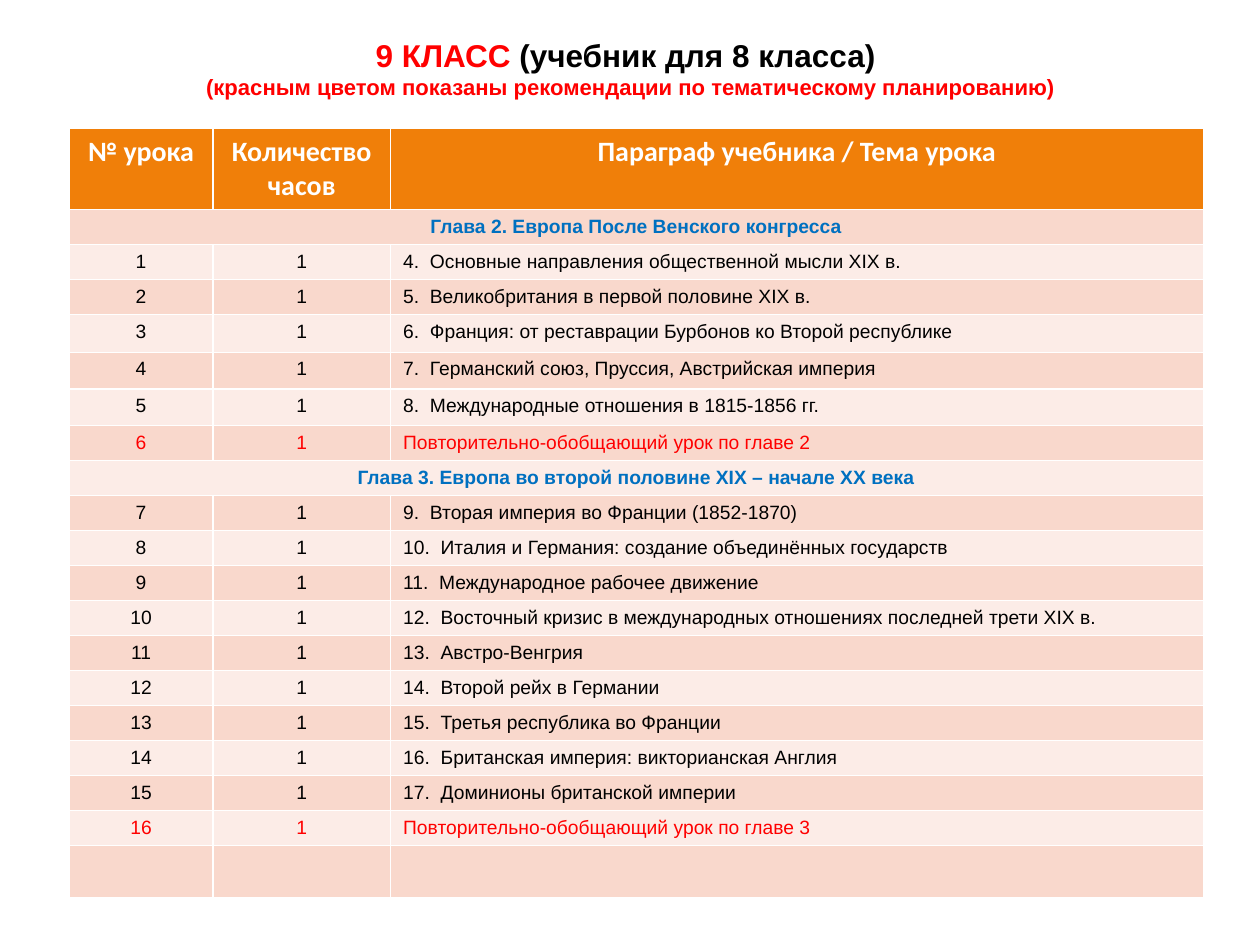
from collections import namedtuple

from pptx import Presentation
from pptx.dml.color import RGBColor
from pptx.enum.text import MSO_ANCHOR as Anchor, MSO_AUTO_SIZE as AutoSize, PP_ALIGN as Align
from pptx.util import Pt

Box = namedtuple("Box", "left top width height")

RED = RGBColor(0xFF, 0x00, 0x00)
BLACK = RGBColor(0x00, 0x00, 0x00)
WHITE = RGBColor(0xFF, 0xFF, 0xFF)
BLUE = RGBColor(0x00, 0x70, 0xC0)
ORANGE = RGBColor(0xF0, 0x7F, 0x09)
BANDS = (RGBColor(0xF9, 0xD8, 0xCC), RGBColor(0xFC, 0xEC, 0xE7))

TITLE_BOX = Box(36, 21.6, 648, 34.6)
TABLE_BOX = Box(39.6, 73.4, 648, 445.7)
COLUMN_WIDTHS = (82, 101.6, 464.4)
HEADER_HEIGHT, ROW_HEIGHT, LAST_HEIGHT = 46.2, 20, 30
TALL_ROWS = {5: 21.6, 6: 21, 7: 21}

HEADINGS = ("№ урока", "Количество часов", "Параграф учебника / Тема урока")
FIRST_PARAGRAPH = 4
CHAPTERS = (
    (2, "Европа После Венского конгресса", (
        "Основные направления общественной мысли XIX в.",
        "Великобритания в первой половине XIX в.",
        "Франция: от реставрации Бурбонов ко Второй республике",
        "Германский союз, Пруссия, Австрийская империя",
        "Международные отношения в 1815-1856 гг.",
    )),
    (3, "Европа во второй половине XIX – начале XX века", (
        "Вторая империя во Франции (1852-1870)",
        "Италия и Германия: создание объединённых государств",
        "Международное рабочее движение",
        "Восточный кризис в международных отношениях последней трети XIX в.",
        "Австро-Венгрия",
        "Второй рейх в Германии",
        "Третья республика во Франции",
        "Британская империя: викторианская Англия",
        "Доминионы британской империи",
    )),
)


def set_font(font, size, color, bold=False, name="Arial"):
    font.name, font.size, font.bold = name, Pt(size), bold
    font.color.rgb = color


def write_cell(cell, text, size, color, bold=False, name="Arial", align=Align.CENTER):
    para = cell.text_frame.paragraphs[0]
    para.text = text
    para.alignment = align
    set_font(para.font, size, color, bold, name)


def add_title(page, box):
    title = page.shapes.title
    title.left, title.top, title.width, title.height = map(Pt, box)
    frame = title.text_frame
    frame.auto_size = AutoSize.NONE
    frame.word_wrap = True
    frame.vertical_anchor = Anchor.MIDDLE
    para = frame.paragraphs[0]
    para.alignment = Align.CENTER
    lines = (
        (("9 КЛАСС ", 18, RED), ("(учебник для 8 класса) ", 18, BLACK)),
        (("(красным цветом показаны рекомендации по тематическому планированию)", 12.6, RED),),
    )
    for index, line in enumerate(lines):
        if index:
            para.add_line_break()
        for text, size, color in line:
            span = para.add_run()
            span.text = text
            set_font(span.font, size, color, bold=True)


def plan_rows():
    rows = []
    lesson, paragraph = 1, FIRST_PARAGRAPH
    for chapter, name, topics in CHAPTERS:
        rows.append(((f"Глава {chapter}. {name}",), BLUE))
        for topic in topics:
            rows.append(((str(lesson), "1", f"{paragraph}.  {topic}"), BLACK))
            lesson += 1
            paragraph += 1
        review = f"Повторительно-обобщающий урок по главе {chapter}"
        rows.append(((str(lesson), "1", review), RED))
        lesson += 1
    rows.append(((), BLACK))
    return rows


def add_plan_table(page, box):
    rows = plan_rows()
    table = page.shapes.add_table(len(rows) + 1, len(HEADINGS), *map(Pt, box)).table
    for column, width in zip(table.columns, COLUMN_WIDTHS):
        column.width = Pt(width)
    for index, row in enumerate(table.rows):
        row.height = Pt(TALL_ROWS.get(index + 1, ROW_HEIGHT))
    table.rows[0].height = Pt(HEADER_HEIGHT)
    table.rows[len(rows)].height = Pt(LAST_HEIGHT)

    for cell, heading in zip(table.rows[0].cells, HEADINGS):
        cell.fill.solid()
        cell.fill.fore_color.rgb = ORANGE
        write_cell(cell, heading, 16, WHITE, bold=True, name="Calibri")

    for index, (texts, color) in enumerate(rows):
        cells = list(table.rows[index + 1].cells)
        for cell in cells:
            cell.fill.solid()
            cell.fill.fore_color.rgb = BANDS[index % 2]
        is_chapter = len(texts) == 1
        if is_chapter:
            cells[0].merge(cells[-1])
        for column, text in enumerate(texts):
            align = Align.LEFT if column == 2 else Align.CENTER
            write_cell(cells[column], text, 11, color, bold=is_chapter, align=align)


def main():
    deck = Presentation()
    deck.slide_width, deck.slide_height = Pt(720), Pt(540)
    page = deck.slides.add_slide(deck.slide_layouts.get_by_name("Title Only"))
    add_title(page, TITLE_BOX)
    add_plan_table(page, TABLE_BOX)
    deck.save("out.pptx")


if __name__ == "__main__":
    main()
